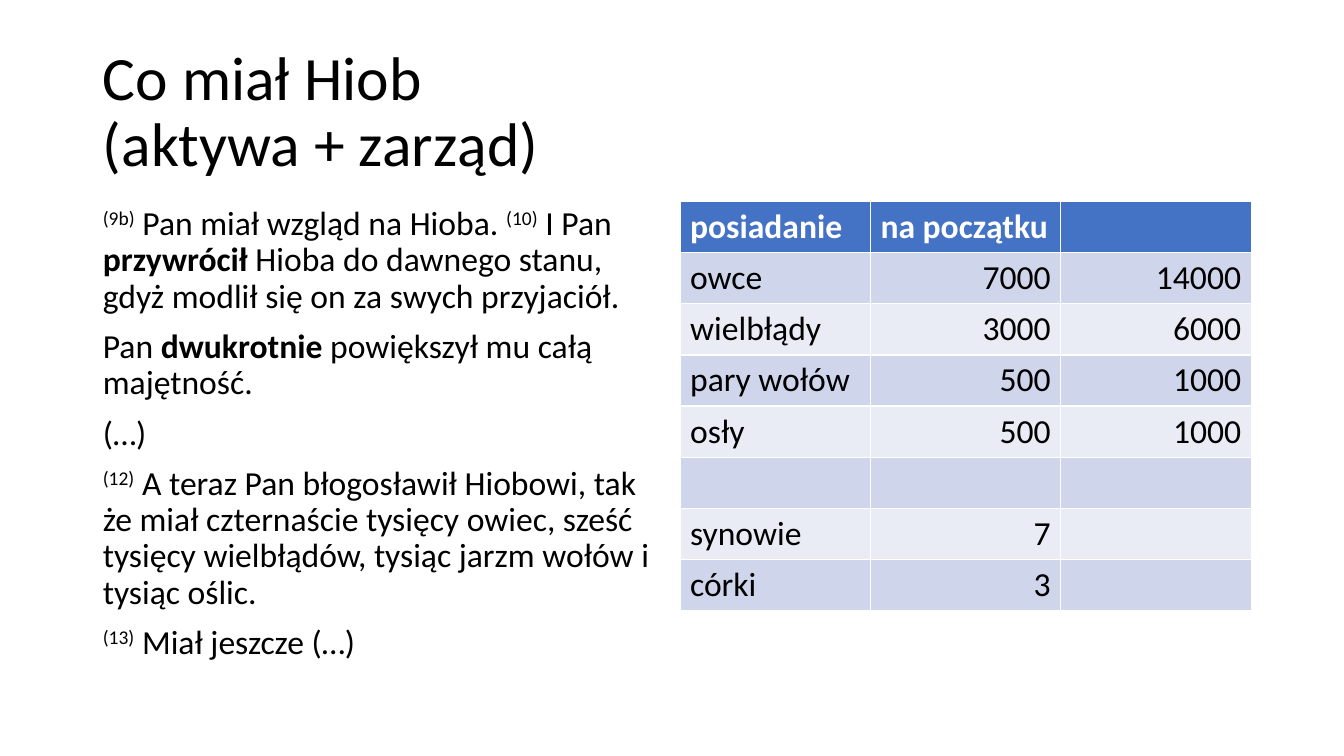
"""Builds a slide on what Job owned: scripture text beside a table of possessions."""
import pptx
import pptx.dml.color
import pptx.enum.text
import pptx.oxml.ns
import pptx.util
import lxml.etree

TITLE = "Co miał Hiob\v(aktywa + zarząd)"
PLAIN, BOLD, RAISED = "plain", "bold", "raised"
VERSES = [
    [("(9b)", RAISED), (" Pan miał wzgląd na Hioba. ", PLAIN), ("(10)", RAISED),
     (" I Pan ", PLAIN), ("przywrócił", BOLD),
     (" Hioba do dawnego stanu, gdyż modlił się on za swych przyjaciół.", PLAIN)],
    [("Pan ", PLAIN), ("dwukrotnie", BOLD), (" powiększył mu całą majętność.", PLAIN)],
    [("(…)", PLAIN)],
    [("(12)", RAISED),
     (" A teraz Pan błogosławił Hiobowi, tak że miał czternaście tysięcy owiec, "
      "sześć tysięcy wielbłądów, tysiąc jarzm wołów i tysiąc oślic.", PLAIN)],
    [("(13)", RAISED), (" Miał jeszcze (…)", PLAIN)],
]
POSSESSIONS = [
    ("posiadanie", "na początku", ""),
    ("owce", "7000", "14000"),
    ("wielbłądy", "3000", "6000"),
    ("pary wołów", "500", "1000"),
    ("osły", "500", "1000"),
    ("", "", ""),
    ("synowie", "7", ""),
    ("córki", "3", ""),
]

FONT = "Calibri"
TITLE_SIZE, TEXT_SIZE = 44, 24
BLACK = pptx.dml.color.RGBColor(0x00, 0x00, 0x00)
WHITE = pptx.dml.color.RGBColor(0xFF, 0xFF, 0xFF)
HEADER_BLUE = pptx.dml.color.RGBColor(0x44, 0x72, 0xC4)
BANDS = [pptx.dml.color.RGBColor(0xE9, 0xEB, 0xF5), pptx.dml.color.RGBColor(0xCF, 0xD5, 0xEA)]

WIDTH, HEIGHT = 13.33, 7.5
MARGIN, GUTTER = 0.92, 0.16
CONTENT_WIDTH = WIDTH - 2 * MARGIN
COLUMN_WIDTH = (CONTENT_WIDTH - GUTTER) / 2
TITLE_TOP, TITLE_HEIGHT = 0.4, 1.45
BODY_TOP, BODY_HEIGHT = 2, 4.76
ROW_HEIGHT = 0.5


def place(shape, *box):
    """Moves a shape to left, top, width and height in inches."""
    shape.left, shape.top, shape.width, shape.height = map(pptx.util.Inches, box)


def style(run, size, color, bold=False):
    """Formats one run."""
    run.font.name = FONT
    run.font.size = pptx.util.Pt(size)
    run.font.bold = bold
    run.font.color.rgb = color


def add_title(slide):
    """Fills the title placeholder."""
    title = slide.shapes.title
    place(title, MARGIN, TITLE_TOP, CONTENT_WIDTH, TITLE_HEIGHT)
    frame = title.text_frame
    frame.text = TITLE
    frame.auto_size = pptx.enum.text.MSO_AUTO_SIZE.NONE
    frame.vertical_anchor = pptx.enum.text.MSO_ANCHOR.MIDDLE
    paragraph = frame.paragraphs[0]
    paragraph.alignment = pptx.enum.text.PP_ALIGN.LEFT
    paragraph.line_spacing = 0.9
    for run in paragraph.runs:
        style(run, TITLE_SIZE, BLACK)


def add_verses(slide):
    """Fills the body placeholder with the verses, without bullets."""
    body = slide.placeholders[1]
    place(body, MARGIN, BODY_TOP, COLUMN_WIDTH, BODY_HEIGHT)
    frame = body.text_frame
    frame.auto_size = pptx.enum.text.MSO_AUTO_SIZE.NONE
    for index, verse in enumerate(VERSES):
        paragraph = frame.add_paragraph() if index else frame.paragraphs[0]
        paragraph.line_spacing = 0.9
        paragraph.space_before = pptx.util.Pt(10)
        properties = paragraph._p.get_or_add_pPr()
        properties.set("marL", "0")
        properties.set("indent", "0")
        lxml.etree.SubElement(properties, pptx.oxml.ns.qn("a:buNone"))
        for text, look in verse:
            run = paragraph.add_run()
            run.text = text
            style(run, TEXT_SIZE, BLACK, look == BOLD)
            if look == RAISED:
                run._r.get_or_add_rPr().set("baseline", "30000")


def add_possessions(slide):
    """Adds the banded table of possessions."""
    rows, columns = len(POSSESSIONS), len(POSSESSIONS[0])
    box = (MARGIN + COLUMN_WIDTH + GUTTER, BODY_TOP, COLUMN_WIDTH, rows * ROW_HEIGHT)
    table = slide.shapes.add_table(rows, columns, *map(pptx.util.Inches, box)).table
    for row, texts in enumerate(POSSESSIONS):
        for column, text in enumerate(texts):
            cell = table.cell(row, column)
            cell.fill.solid()
            cell.fill.fore_color.rgb = BANDS[row % 2] if row else HEADER_BLUE
            cell.text_frame.text = text
            paragraph = cell.text_frame.paragraphs[0]
            paragraph.font.size = pptx.util.Pt(TEXT_SIZE)
            if row and column:
                paragraph.alignment = pptx.enum.text.PP_ALIGN.RIGHT
            for run in paragraph.runs:
                style(run, TEXT_SIZE, BLACK if row else WHITE, row == 0)


def main():
    """Builds and saves the presentation."""
    presentation = pptx.Presentation()
    presentation.slide_width = pptx.util.Inches(WIDTH)
    presentation.slide_height = pptx.util.Inches(HEIGHT)
    slide = presentation.slides.add_slide(presentation.slide_layouts[1])
    add_title(slide)
    add_verses(slide)
    add_possessions(slide)
    presentation.save("out.pptx")


if __name__ == "__main__":
    main()
